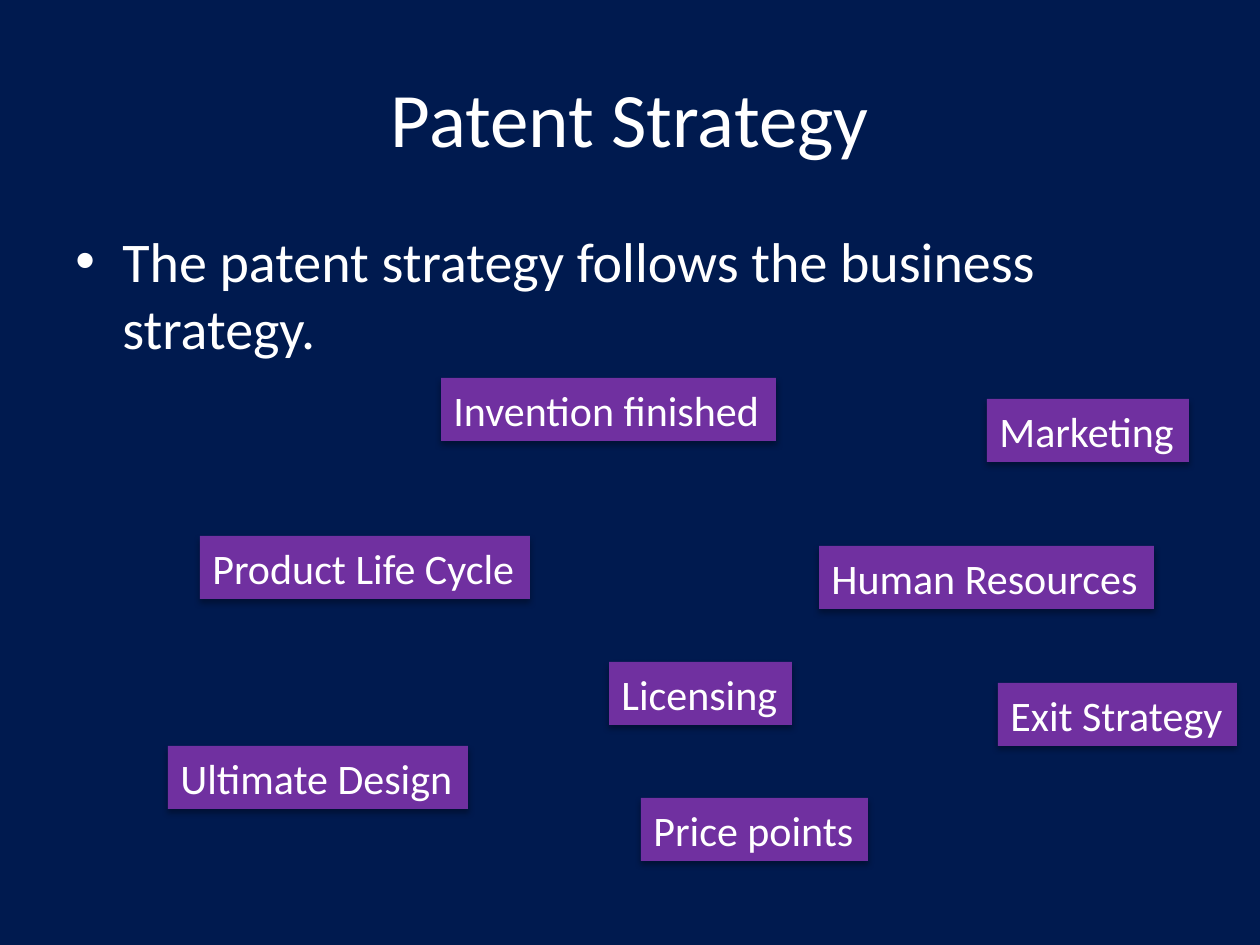
from lxml import etree
from pptx import Presentation
from pptx.dml.color import RGBColor
from pptx.enum.shapes import MSO_SHAPE
from pptx.enum.text import MSO_ANCHOR, MSO_AUTO_SIZE, PP_ALIGN
from pptx.oxml.ns import qn
from pptx.util import Emu, Pt

RECTANGLE = MSO_SHAPE.RECTANGLE
MIDDLE, TOP = MSO_ANCHOR.MIDDLE, MSO_ANCHOR.TOP
CENTER, LEFT = PP_ALIGN.CENTER, PP_ALIGN.LEFT
GROW, FIXED = MSO_AUTO_SIZE.SHAPE_TO_FIT_TEXT, MSO_AUTO_SIZE.NONE

PX_PER_INCH = 126


def px(length):
    return Emu(round(length * 914400 / PX_PER_INCH))


def color(hex_string):
    return RGBColor.from_string(hex_string)


def add_xml(parent, tag, **attributes):
    child = etree.SubElement(parent, qn(tag))
    for name, value in attributes.items():
        child.set(name, str(value))
    return child


class SlideBuilder:
    font_name = "Calibri"
    text_color = "FFFFFF"
    background = "001A4F"
    label_fill = "7030A0"
    label_height = 63

    def __init__(self, presentation):
        self.slide = presentation.slides.add_slide(presentation.slide_layouts[6])
        fill = self.slide.background.fill
        fill.solid()
        fill.fore_color.rgb = color(self.background)

    def set_text(self, shape, text, size, align=LEFT, anchor=TOP):
        frame = shape.text_frame
        frame.vertical_anchor = anchor
        paragraph = frame.paragraphs[0]
        paragraph.text = text
        paragraph.alignment = align
        paragraph.font.name = self.font_name
        paragraph.font.size = Pt(size)
        paragraph.font.color.rgb = color(self.text_color)
        return paragraph

    def text_box(self, left, top, width, height, text, size, **layout):
        shape = self.slide.shapes.add_textbox(px(left), px(top), px(width), px(height))
        shape.text_frame.word_wrap = True
        shape.text_frame.auto_size = FIXED
        return self.set_text(shape, text, size, **layout)

    def bullet(self, left, top, width, height, text, size):
        paragraph = self.text_box(left, top, width, height, text, size)
        properties = paragraph._p.get_or_add_pPr()
        properties.set("marL", str(px(47)))
        properties.set("indent", str(-px(47)))
        # Schema order: spacing and bullet come before the run defaults
        defaults = properties.find(qn("a:defRPr"))
        properties.remove(defaults)
        add_xml(add_xml(properties, "a:spcBef"), "a:spcPct", val=20000)
        add_xml(properties, "a:buFont", typeface="Arial")
        add_xml(properties, "a:buChar", char="•")
        properties.append(defaults)

    def label(self, left, top, width, text):
        shape = self.slide.shapes.add_shape(
            RECTANGLE, px(left), px(top), px(width), px(self.label_height))
        shape.fill.solid()
        shape.fill.fore_color.rgb = color(self.label_fill)
        shape.line.fill.background()
        self.soft_shadow(shape)
        shape.text_frame.word_wrap = False
        shape.text_frame.auto_size = GROW
        self.set_text(shape, text, 24)

    def soft_shadow(self, shape):
        shape.shadow.inherit = False
        effects = shape._element.spPr.find(qn("a:effectLst"))
        shadow = add_xml(effects, "a:outerShdw", blurRad=Pt(3.5), dist=Pt(2.2),
                         dir=5400000, algn="ctr", rotWithShape=0)
        add_xml(add_xml(shadow, "a:srgbClr", val="000000"), "a:alpha", val=32000)


LABELS = [  # left, top, width, text
    (168, 746, 300, "Ultimate Design"),
    (200, 536, 330, "Product Life Cycle"),
    (998, 683, 239, "Exit Strategy"),
    (609, 662, 183, "Licensing"),
    (987, 399, 202, "Marketing"),
    (441, 378, 335, "Invention finished"),
    (819, 546, 335, "Human Resources"),
    (641, 798, 227, "Price points"),
]


def main():
    presentation = Presentation()
    presentation.slide_width, presentation.slide_height = px(1260), px(945)
    builder = SlideBuilder(presentation)

    # Title and statement
    builder.text_box(63, 38, 1134, 158, "Patent Strategy", 44,
                     align=CENTER, anchor=MIDDLE)
    builder.bullet(63, 220, 1134, 168,
                   "The patent strategy follows the business strategy.", 32)

    # Scattered business topics
    for left, top, width, text in LABELS:
        builder.label(left, top, width, text)

    presentation.save("out.pptx")


if __name__ == "__main__":
    main()
